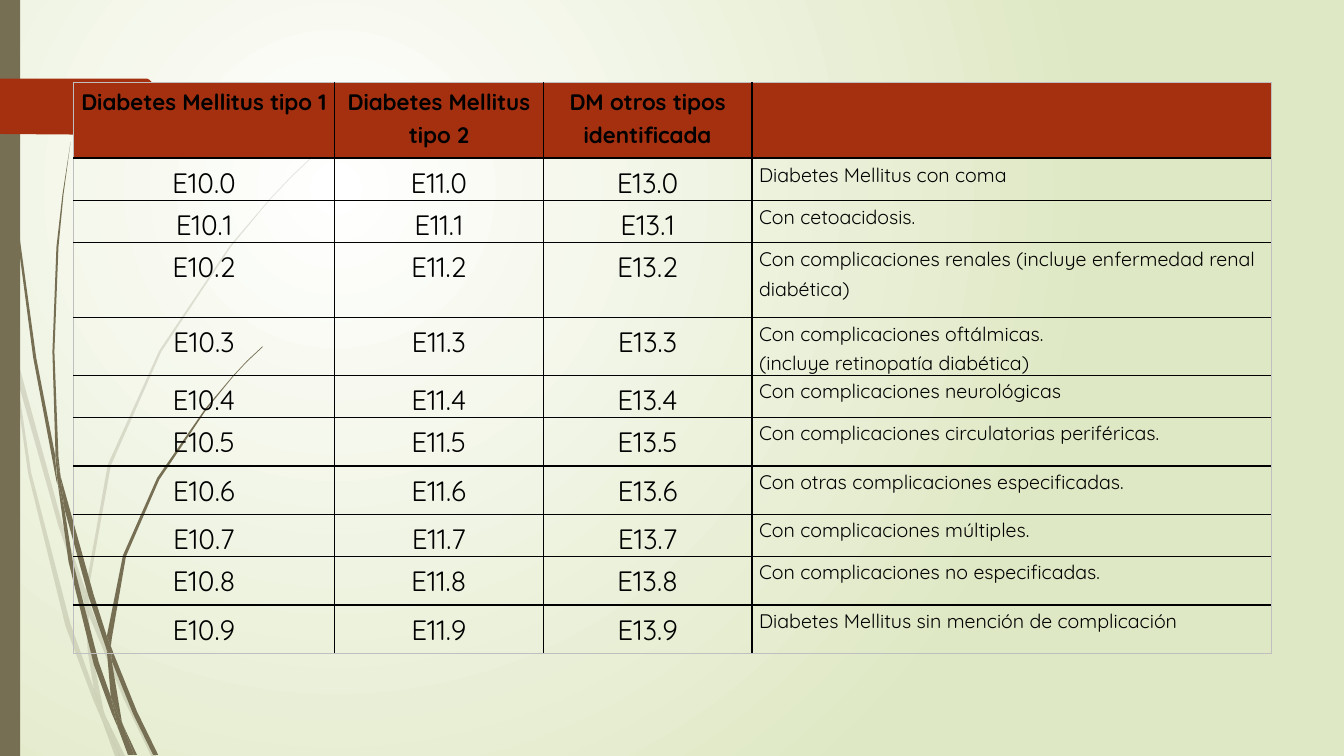
from pptx import Presentation
from pptx.dml.color import RGBColor
from pptx.enum.shapes import MSO_SHAPE as SHAPE
from pptx.enum.text import PP_ALIGN as ALIGN
from pptx.oxml import parse_xml
from pptx.oxml.ns import nsdecls
from pptx.util import Cm, Pt

FONT = "Quicksand"
RUST, OLIVE, BLACK, WHITE, LIME, GREY = "A53010", "766F54", "000000", "FFFFFF", "DFE8C4", "BFBFBF"

HEADERS = ["Diabetes Mellitus tipo 1", "Diabetes Mellitus tipo 2", "DM otros tipos identificada", ""]
FAMILIES = ["E10", "E11", "E13"]
COMPLICATIONS = [
    ["Diabetes Mellitus con coma"],
    ["Con cetoacidosis."],
    ["Con complicaciones renales (incluye enfermedad renal diabética)"],
    ["Con complicaciones oftálmicas.", "(incluye retinopatía diabética)"],
    ["Con complicaciones neurológicas"],
    ["Con complicaciones circulatorias periféricas."],
    ["Con otras complicaciones especificadas."],
    ["Con complicaciones múltiples."],
    ["Con complicaciones no especificadas."],
    ["Diabetes Mellitus sin mención de complicación"],
]
FIRST_JUSTIFIED = 3
COLUMN_WIDTHS = [6.58, 5.26, 5.26, 13.08]
TALL, MIDDLE, LOW = 1.9, 1.22, 0.74
ROW_HEIGHTS = [TALL, LOW, LOW, TALL, MIDDLE, LOW, MIDDLE, MIDDLE, LOW, MIDDLE, MIDDLE]

GRID_UNIT = Cm(0.0254)
PALE_BLADES = [
    [(11, 350), (9, 322), (0, 282), (0, 299), (10, 344)],
    [(58, 522), (84, 599), (85, 586), (62, 520), (14, 345), (17, 376)],
    [(92, 607), (88, 596), (88, 610), (123, 694), (150, 750), (155, 750), (127, 692)],
    [(119, 750), (124, 750), (105, 711)],
    [(93, 683), (70, 619), (31, 469), (17, 376), (11, 350), (28, 470), (65, 621), (92, 693),
     (101, 714), (99, 707)],
    [(84, 599), (87, 646), (93, 683), (96, 692), (105, 711), (103, 706), (91, 646), (88, 610),
     (88, 608)],
    [(88, 584), (110, 462), (160, 349), (229, 245), (268, 198), (290, 175), (312, 154), (312, 153),
     (289, 175), (268, 197), (228, 244), (158, 348), (107, 461), (85, 584), (85, 586), (88, 596)],
    [(101, 714), (114, 750), (119, 750)],
    [(88, 608), (88, 610), (88, 596), (85, 586), (84, 599)],
    [(96, 692), (93, 683), (99, 707), (101, 714), (119, 750), (105, 711)],
]
DARK_BLADES = [
    [(7, 110), (17, 233), (33, 355), (56, 477), (57, 481), (55, 457), (55, 453), (36, 355),
     (19, 232), (8, 109), (5, 48), (4, 0), (3, 0), (4, 48)],
    [(88, 592), (106, 645), (106, 633), (106, 631), (93, 590), (60, 472), (64, 505)],
    [(113, 649), (110, 641), (111, 656), (132, 708), (152, 749), (157, 749), (136, 706)],
    [(110, 691), (98, 657), (72, 556), (64, 505), (57, 477), (68, 557), (93, 659), (111, 708),
     (117, 722), (116, 717)],
    [(60, 472), (58, 453), (54, 349), (58, 245), (63, 193), (70, 141), (62, 193), (56, 245),
     (52, 349), (55, 449)],
    [(133, 749), (136, 749), (122, 719)],
    [(57, 477), (64, 505), (60, 472), (55, 449), (55, 453)],
    [(111, 633), (125, 552), (158, 476), (205, 406), (231, 374), (245, 359), (261, 344), (260, 344),
     (245, 358), (231, 373), (204, 405), (156, 474), (122, 551), (106, 631), (110, 641)],
    [(117, 722), (127, 749), (131, 749)],
    [(106, 645), (110, 691), (116, 706), (122, 719), (121, 716), (111, 656), (109, 651)],
    [(106, 645), (109, 651), (111, 656), (110, 641), (106, 631), (106, 633)],
    [(116, 706), (110, 691), (116, 717), (117, 722), (130, 749), (133, 749), (122, 719)],
]
TAG = [(173, 108), (148, 133), (146, 134), (136, 134), (0, 133), (0, 78), (146, 78), (148, 79),
       (173, 104), (174, 106)]


def color(value):
    return RGBColor.from_string(value)


def paint(shape, fill):
    shape.shadow.inherit = False
    shape.fill.solid()
    shape.fill.fore_color.rgb = color(fill)
    shape.line.fill.background()


def draw_outline(shapes, points, fill):
    outline = shapes.build_freeform(*points[0], scale=GRID_UNIT)
    outline.add_line_segments(points[1:], close=True)
    shape = outline.convert_to_shape()
    paint(shape, fill)
    return shape


def draw_plant(slide, blades, opacity):
    plant = slide.shapes.add_group_shape()
    for points in blades:
        blade = draw_outline(plant.shapes, points, OLIVE)
        if opacity < 100:
            tint = blade.element.xpath("./p:spPr/a:solidFill/a:srgbClr")[0]
            tint.append(parse_xml(f'<a:alpha {nsdecls("a")} val="{opacity * 1000}"/>'))


def draw_background(slide):
    fill = slide.background.fill
    fill.gradient()
    for stop, value, place in zip(fill.gradient_stops, (WHITE, LIME), (0, 1)):
        stop.color.rgb = color(value)
        stop.position = place
    gradient = slide.element.xpath(".//p:bg//a:gradFill")[0]
    for direction in gradient.xpath("./a:lin"):
        gradient.remove(direction)
    gradient.append(parse_xml(
        f'<a:path {nsdecls("a")} path="circle">'
        '<a:fillToRect l="50000" t="50000" r="100000" b="100000"/></a:path>'))


def set_borders(cell, outer_sides):
    properties = cell._tc.get_or_add_tcPr()
    for place, side in enumerate("LRTB"):
        value, width = (GREY, Pt(0.5)) if outer_sides[side] else (BLACK, Pt(1))
        properties.insert(place, parse_xml(
            f'<a:ln{side} {nsdecls("a")} w="{width}"><a:solidFill>'
            f'<a:srgbClr val="{value}"/></a:solidFill></a:ln{side}>'))


def write(cell, lines, size, bold, align, first_justified):
    cell.text = "\n".join(lines)
    for number, paragraph in enumerate(cell.text_frame.paragraphs):
        justified = first_justified and number == 0
        paragraph.alignment = ALIGN.JUSTIFY if justified else align
        paragraph.line_spacing = 1.15 if justified else 1.2
        font = paragraph.font
        font.name, font.size, font.bold = FONT, Pt(size), bold
        font.color.rgb = color(BLACK)


def draw_codes(slide):
    rows = [[[header] for header in HEADERS]]
    rows += [[[f"{family}.{digit}"] for family in FAMILIES] + [lines]
             for digit, lines in enumerate(COMPLICATIONS)]
    last_row, last_column = len(rows) - 1, len(HEADERS) - 1
    codes = slide.shapes.add_table(len(rows), len(HEADERS), Cm(1.85), Cm(2.08),
                                   Cm(sum(COLUMN_WIDTHS)), Cm(13.77)).table
    codes.first_row = codes.horz_banding = False
    for column, width in zip(codes.columns, COLUMN_WIDTHS):
        column.width = Cm(width)
    for r, (row, height) in enumerate(zip(rows, ROW_HEIGHTS)):
        codes.rows[r].height = Cm(height)
        for c, lines in enumerate(row):
            cell = codes.cell(r, c)
            cell.margin_left = cell.margin_right = Cm(0.18)
            cell.margin_top = cell.margin_bottom = 0
            is_header, is_text = r == 0, c == last_column
            size = 16 if is_header else 14 if is_text else 20
            write(cell, lines, size, is_header, ALIGN.LEFT if is_text else ALIGN.CENTER,
                  is_text and r > FIRST_JUSTIFIED)
            if is_header:
                cell.fill.solid()
                cell.fill.fore_color.rgb = color(RUST)
            else:
                cell.fill.background()
            set_borders(cell, {"L": c == 0, "R": is_text, "T": is_header, "B": r == last_row})


def main():
    deck = Presentation()
    deck.slide_width, deck.slide_height = Cm(33.87), Cm(19.05)
    slide = deck.slides.add_slide(deck.slide_layouts[6])
    draw_background(slide)
    draw_plant(slide, PALE_BLADES, 20)
    draw_plant(slide, DARK_BLADES, 100)
    paint(slide.shapes.add_shape(SHAPE.RECTANGLE, 0, 0, Cm(0.51), deck.slide_height), OLIVE)
    draw_outline(slide.shapes, TAG, RUST)
    draw_codes(slide)
    deck.save("out.pptx")


if __name__ == "__main__":
    main()
